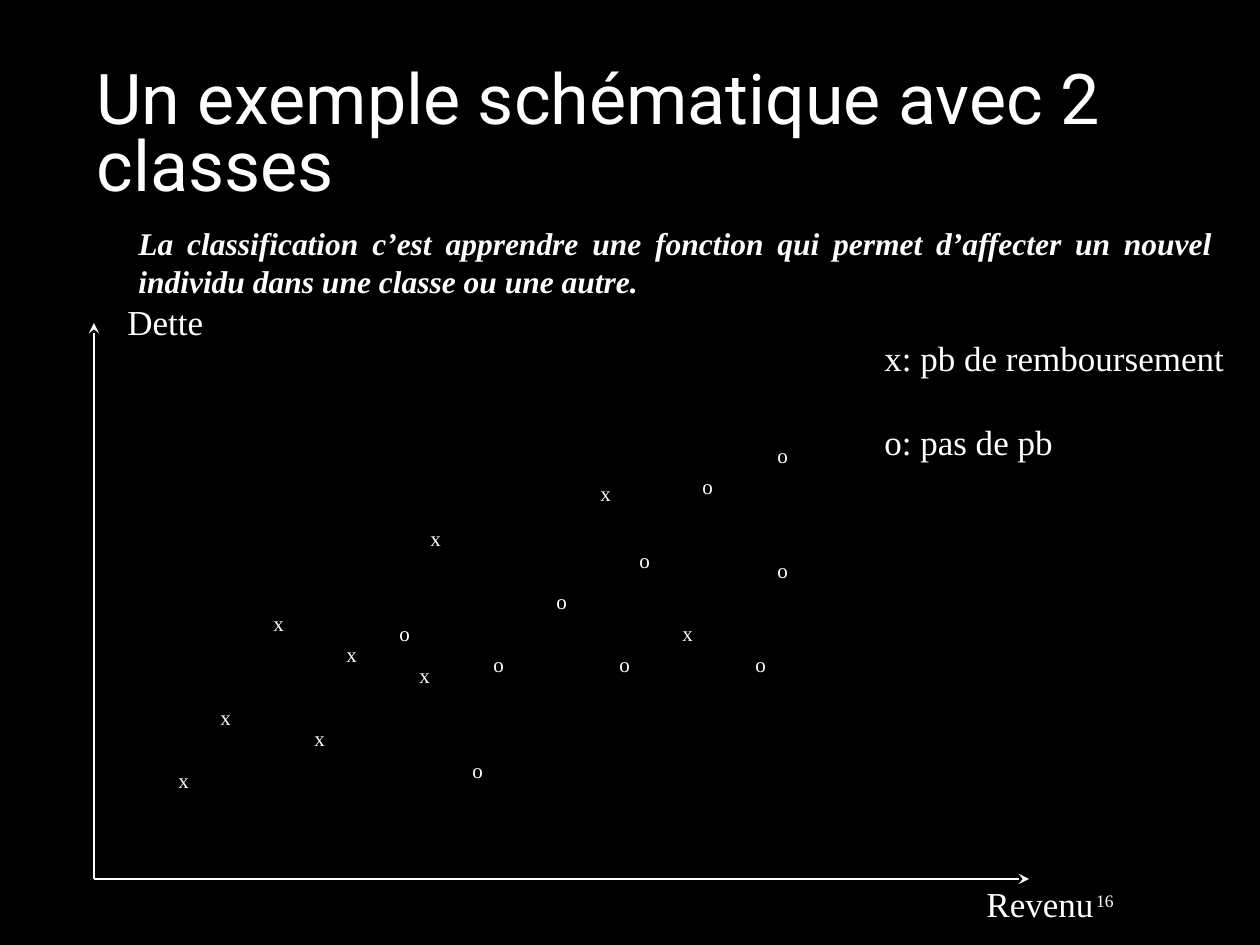
from lxml import etree
from pptx import Presentation
from pptx.dml.color import RGBColor
from pptx.enum.shapes import MSO_CONNECTOR
from pptx.enum.text import MSO_ANCHOR, MSO_AUTO_SIZE, PP_ALIGN
from pptx.oxml.ns import qn
from pptx.util import Emu, Pt

PX = 914400 / 126
COLORS = {"background": "000000", "ink": "FFFFFF"}
SERIF, SANS = "Times New Roman", "Roboto"
LEFT, RIGHT, JUSTIFY = PP_ALIGN.LEFT, PP_ALIGN.RIGHT, PP_ALIGN.JUSTIFY
TOP, MIDDLE, BOTTOM = MSO_ANCHOR.TOP, MSO_ANCHOR.MIDDLE, MSO_ANCHOR.BOTTOM
STRAIGHT = MSO_CONNECTOR.STRAIGHT
NO_AUTOFIT = MSO_AUTO_SIZE.NONE

MARK_W, MARK_H = 36, 38
# Centres of the marks, from the top left corner of the plot
POINTS = {
    "x": [(90, 457), (512, 170), (132, 394), (258, 331), (226, 415),
          (331, 352), (342, 215), (594, 310), (185, 300)],
    "o": [(468, 278), (551, 237), (614, 163), (689, 132), (689, 247),
          (667, 341), (531, 341), (384, 447), (405, 341), (311, 310)],
}


def px(n):
    return Emu(round(n * PX))


def rgb(name):
    return RGBColor.from_string(COLORS[name])


def add_run(p, text, size, font=SERIF, bold=False, italic=False):
    r = p.add_run()
    r.text = text
    r.font.size = Pt(size)
    r.font.name = font
    r.font.bold = bold
    r.font.italic = italic
    r.font.color.rgb = rgb("ink")


def add_text(slide, box, lines, size, align=LEFT, anchor=TOP, wrap=False,
             gap=0, **style):
    """Text box with one paragraph a line, gap points apart."""
    sp = slide.shapes.add_textbox(*map(px, box))
    tf = sp.text_frame
    tf.word_wrap = wrap
    tf.vertical_anchor = anchor
    for i, line in enumerate(lines):
        p = tf.add_paragraph() if i else tf.paragraphs[0]
        p.alignment = align
        if i and gap:
            p.space_before = Pt(gap)
        add_run(p, line, size, **style)


def add_arrow(slide, x1, y1, x2, y2):
    cxn = slide.shapes.add_connector(STRAIGHT, *map(px, (x1, y1, x2, y2)))
    cxn.line.color.rgb = rgb("ink")
    cxn.line.width = Pt(1)
    ln = cxn.line._get_or_add_ln()
    etree.SubElement(ln, qn("a:tailEnd"), type="stealth")
    etree.SubElement(cxn._element.spPr, qn("a:effectLst"))


def add_title(slide, box, text):
    sp = slide.shapes.title
    sp.left, sp.top, sp.width, sp.height = map(px, box)
    tf = sp.text_frame
    tf.auto_size = NO_AUTOFIT
    tf.vertical_anchor = BOTTOM
    p = tf.paragraphs[0]
    p.alignment = LEFT
    p.line_spacing = 0.8
    add_run(p, text, 40, SANS)


def add_plot(slide, box):
    """Two axes with their names, and the marks of both classes."""
    x, y, w, h = box
    for end in ((x, y), (x + w, y + h)):
        add_arrow(slide, x, y + h, *end)
    add_text(slide, (x + 21, y - 29, 102, 55), ["Dette"], 20)
    add_text(slide, (x + w - 55, y + h - 3, 134, 55), ["Revenu"], 20)
    for mark, centres in POINTS.items():
        for cx, cy in centres:
            mark_box = (x + cx - MARK_W / 2, y + cy - MARK_H / 2, MARK_W, MARK_H)
            add_text(slide, mark_box, [mark], 12)


def main():
    prs = Presentation()
    prs.slide_width, prs.slide_height = px(1260), px(945)
    slide = prs.slides.add_slide(prs.slide_layouts[5])
    slide.background.fill.solid()
    slide.background.fill.fore_color.rgb = rgb("background")

    add_title(slide, (84, 53, 1091, 158), "Un exemple schématique avec 2 classes")
    add_text(slide, (126, 218, 1099, 89),
             ["La classification c’est apprendre une fonction qui permet "
              "d’affecter un nouvel individu dans une classe ou une autre."],
             18, align=JUSTIFY, wrap=True, bold=True, italic=True)
    add_plot(slide, (94, 323, 935, 556))
    add_text(slide, (872, 330, 368, 140),
             ["x: pb de remboursement", "o: pas de pb"], 20, gap=24)
    add_text(slide, (1000, 882, 126, 38), ["16"], 10, align=RIGHT,
             anchor=MIDDLE, wrap=True)
    prs.save("out.pptx")


if __name__ == "__main__":
    main()
